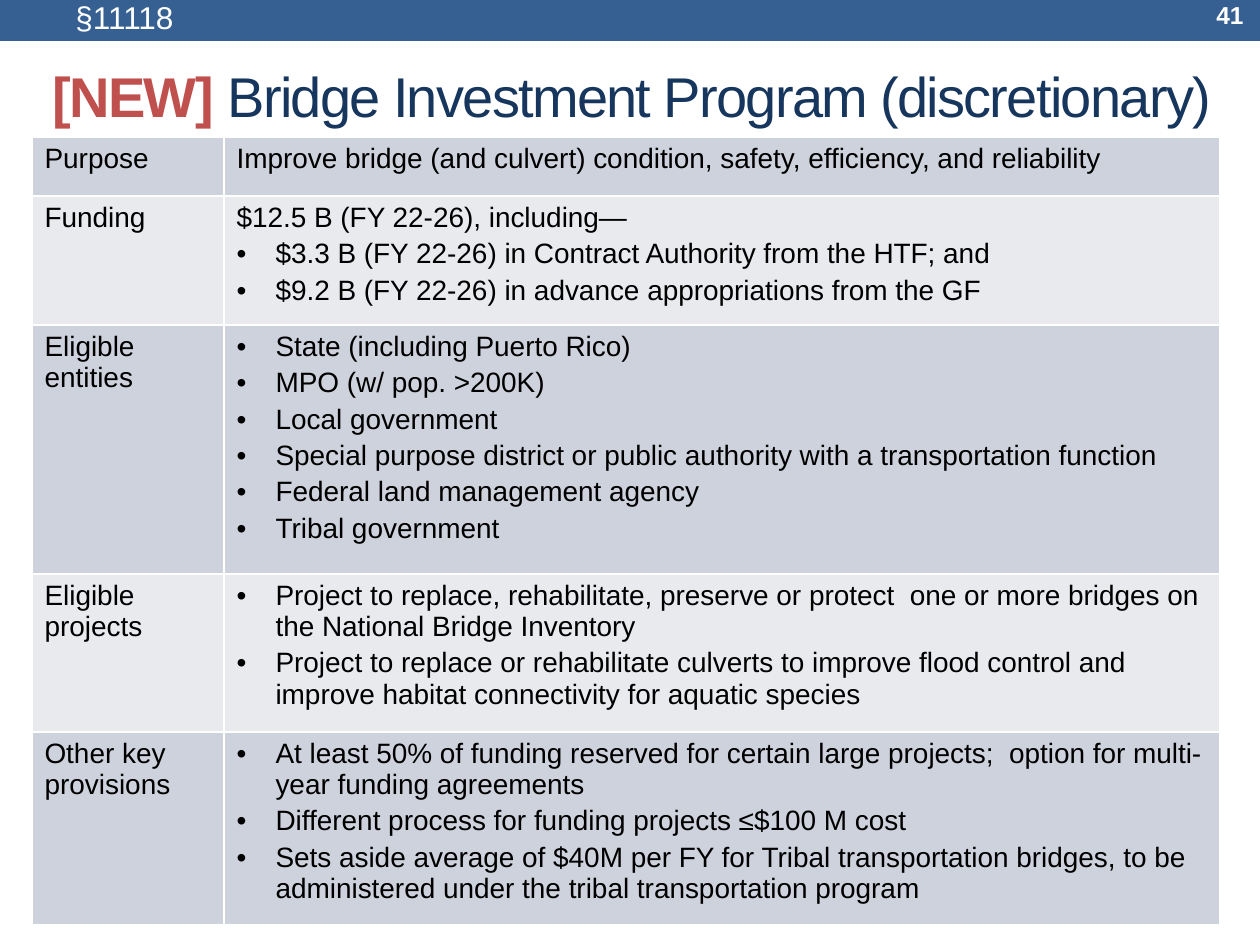
from lxml.etree import SubElement
from pptx import Presentation
from pptx.dml.color import RGBColor
from pptx.enum.shapes import MSO_SHAPE
from pptx.enum.text import MSO_ANCHOR, MSO_AUTO_SIZE, PP_ALIGN
from pptx.oxml import parse_xml
from pptx.oxml.ns import nsdecls, qn
from pptx.util import Pt

SCALE = 914400 / 126  # EMU per px
FONT = "Arial"
WHITE = RGBColor(0xFF, 0xFF, 0xFF)
BLACK = RGBColor(0, 0, 0)
BAND_BLUE = RGBColor(0x36, 0x60, 0x92)
NAVY = RGBColor(0x17, 0x36, 0x5D)
RED = RGBColor(0xC0, 0x50, 0x4D)
ROW_FILLS = (RGBColor(0xCE, 0xD2, 0xDC), RGBColor(0xE8, 0xEA, 0xEE))

BULLET = "• "
COLUMN_WIDTHS = (192, 996)
# Label, row height, space after each paragraph, lines of text
PROGRAM_ROWS = (
    ("Purpose", 59, 9, (
        "Improve bridge (and culvert) condition, safety, efficiency, and reliability",
    )),
    ("Funding", 129, 3, (
        "$12.5 B (FY 22-26), including—",
        "• $3.3 B (FY 22-26) in Contract Authority from the HTF; and",
        "• $9.2 B (FY 22-26) in advance appropriations from the GF",
    )),
    ("Eligible entities", 249, 3, (
        "• State (including Puerto Rico)",
        "• MPO (w/ pop. >200K)",
        "• Local government",
        "• Special purpose district or public authority with a transportation function",
        "• Federal land management agency",
        "• Tribal government",
    )),
    ("Eligible projects", 158, 3, (
        "• Project to replace, rehabilitate, preserve or protect  one or more bridges "
        "on the National Bridge Inventory",
        "• Project to replace or rehabilitate culverts to improve flood control and "
        "improve habitat connectivity for aquatic species",
    )),
    ("Other key provisions", 193, 3, (
        "• At least 50% of funding reserved for certain large projects;  option for "
        "multi-year funding agreements",
        "• Different process for funding projects ≤$100 M cost",
        "• Sets aside average of $40M per FY for Tribal transportation bridges, to be "
        "administered under the tribal transportation program",
    )),
)


def px(length):
    return round(length * SCALE)


def emu_box(*lengths):
    return [px(length) for length in lengths]


def style_font(font, size, color, bold=False):
    font.name = FONT
    font.size = Pt(size)
    font.bold = bold
    font.color.rgb = color


def add_label(page, box, text, size, bold=False, align=PP_ALIGN.LEFT,
              anchor=MSO_ANCHOR.TOP):
    frame = page.shapes.add_textbox(*emu_box(*box)).text_frame
    frame.word_wrap = True
    frame.vertical_anchor = anchor
    para = frame.paragraphs[0]
    para.text = text
    para.alignment = align
    style_font(para.font, size, WHITE, bold)


def add_header(page, left, top, width, height):
    band = page.shapes.add_shape(
        MSO_SHAPE.RECTANGLE, *emu_box(left, top, width, height))
    band.shadow.inherit = False
    band.fill.solid()
    band.fill.fore_color.rgb = BAND_BLUE
    band.line.fill.background()
    add_label(page, (left + 63, top + 1, 1051, height), "§11118", 18)
    add_label(page, (left + width - 151, top + 1, 147, height - 5), "41", 14,
              True, PP_ALIGN.RIGHT, MSO_ANCHOR.MIDDLE)


def add_title(page, left, top, width, height):
    title = page.shapes.title
    title.left, title.top, title.width, title.height = emu_box(
        left, top, width, height)
    frame = title.text_frame
    frame.auto_size = MSO_AUTO_SIZE.NONE
    frame.word_wrap = True
    frame.vertical_anchor = MSO_ANCHOR.MIDDLE
    para = frame.paragraphs[0]
    para.alignment = PP_ALIGN.LEFT
    for text, color, bold in (
            ("[NEW] ", RED, True),
            ("Bridge Investment Program (discretionary)", NAVY, False)):
        span = para.add_run()
        span.text = text
        style_font(span.font, 32, color, bold)
        span.font._element.set("spc", "-100")


def add_bullet(para):
    properties = para._p.get_or_add_pPr()
    properties.set("marL", str(px(39)))
    properties.set("indent", str(-px(39)))
    SubElement(properties, qn("a:buFont")).set("typeface", FONT)
    SubElement(properties, qn("a:buChar")).set("char", BULLET.strip())


def add_borders(cell):
    properties = cell._tc.get_or_add_tcPr()
    for index, side in enumerate(("lnL", "lnR", "lnT", "lnB")):
        properties.insert(index, parse_xml(
            f'<a:{side} {nsdecls("a")} w="12700"><a:solidFill>'
            f'<a:srgbClr val="{WHITE}"/></a:solidFill></a:{side}>'))


def fill_cell(cell, lines, fill, space_after=0):
    cell.fill.solid()
    cell.fill.fore_color.rgb = fill
    add_borders(cell)
    frame = cell.text_frame
    for index, line in enumerate(lines):
        para = frame.add_paragraph() if index else frame.paragraphs[0]
        para.text = line.removeprefix(BULLET)
        para.space_after = Pt(space_after)
        if line.startswith(BULLET):
            add_bullet(para)
        style_font(para.font, 16, BLACK)


def add_program_table(page, left, top):
    heights = [row[1] for row in PROGRAM_ROWS]
    table = page.shapes.add_table(
        len(PROGRAM_ROWS), len(COLUMN_WIDTHS),
        *emu_box(left, top, sum(COLUMN_WIDTHS), sum(heights))).table
    table.first_row = False
    table.horz_banding = False
    for column, width in zip(table.columns, COLUMN_WIDTHS):
        column.width = px(width)
    for index, (label, height, space_after, lines) in enumerate(PROGRAM_ROWS):
        table.rows[index].height = px(height)
        fill = ROW_FILLS[index % 2]
        fill_cell(table.cell(index, 0), [label], fill)
        fill_cell(table.cell(index, 1), lines, fill, space_after)


def main():
    deck = Presentation()
    deck.slide_width, deck.slide_height = emu_box(1260, 945)
    page = deck.slides.add_slide(deck.slide_layouts[5])
    add_header(page, 0, -9, 1260, 50)
    add_title(page, 40, 34, 1206, 122)
    add_program_table(page, 32, 137)
    deck.save("out.pptx")


if __name__ == "__main__":
    main()
